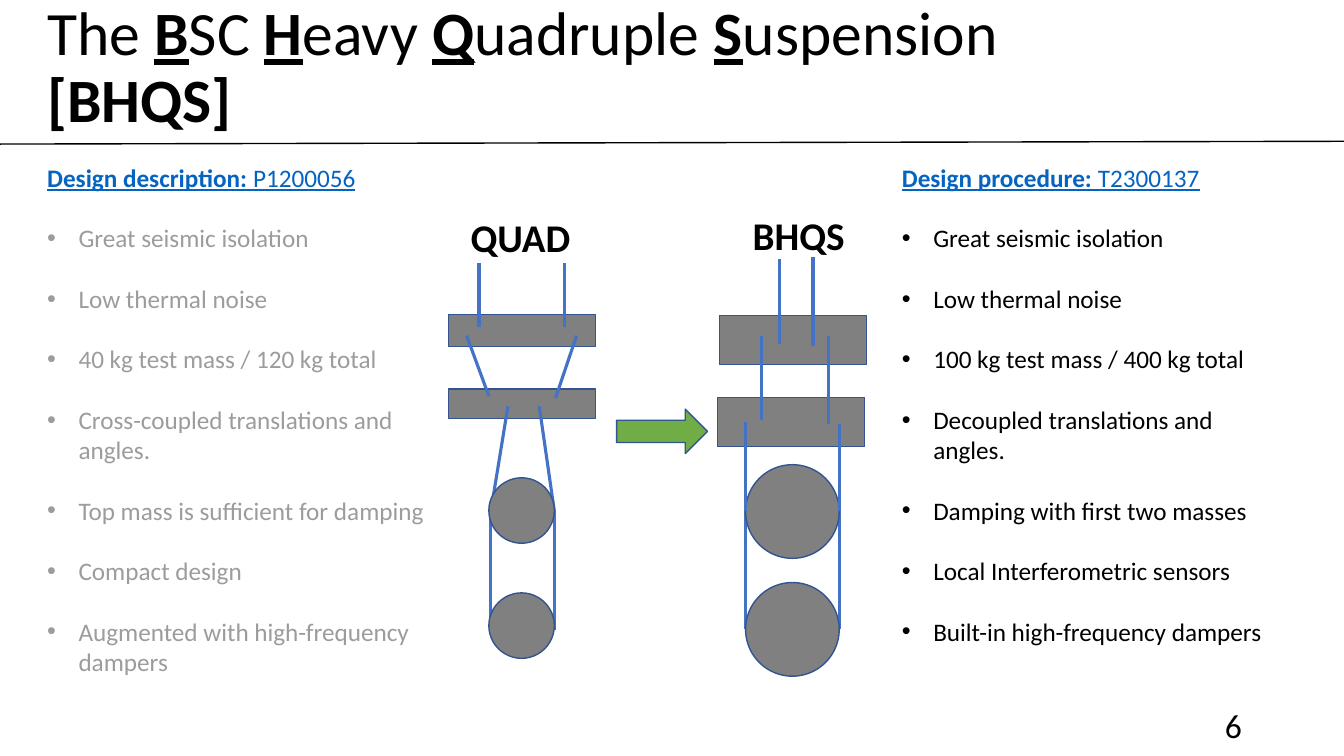
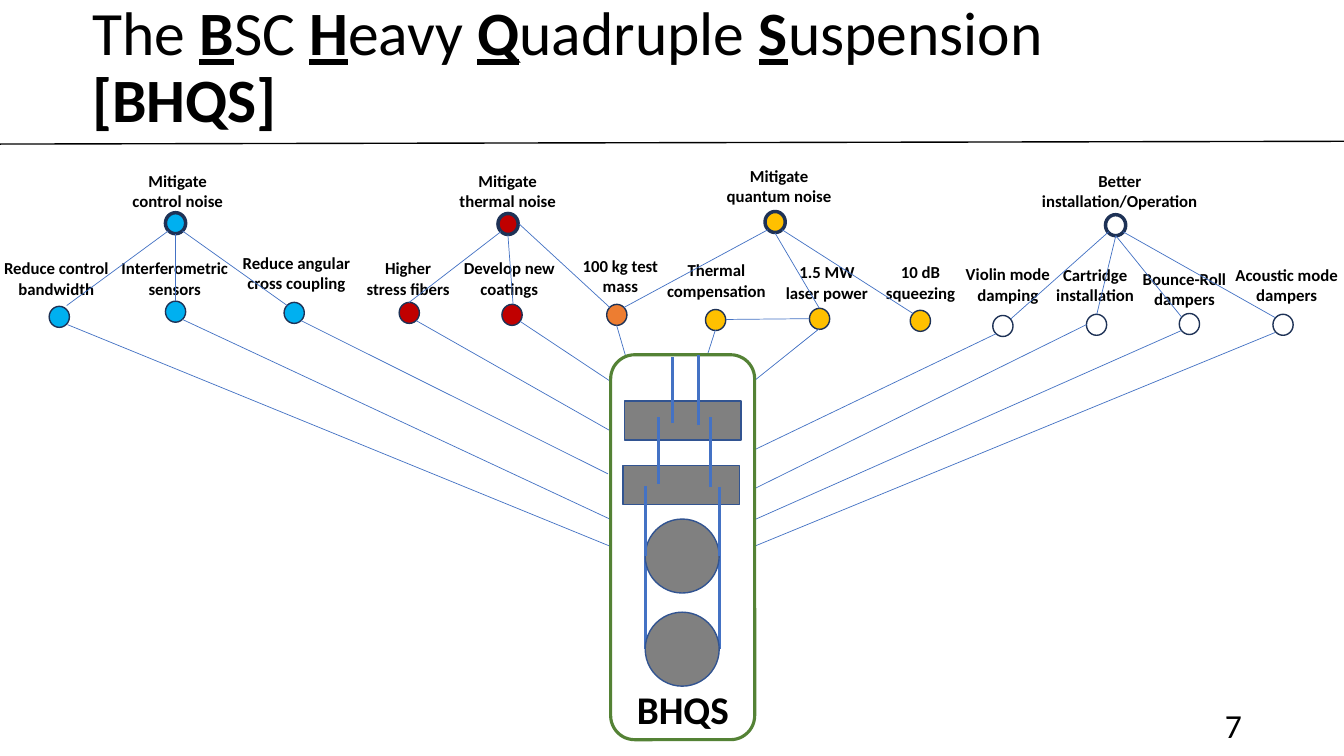
from lxml import etree
from pptx import Presentation
from pptx.dml.color import RGBColor
from pptx.enum import shapes, text
from pptx.oxml import ns
from pptx.util import Cm, Pt

BLACK, GREY, FADED, WHITE = "000000", "808080", "9C9C9C", "FFFFFF"
WIRE, EDGE, NAVY, LINK = "4472C4", "325491", "1E3256", "0563C1"
CYAN, RED, AMBER, ORANGE = "00B0F0", "C00000", "FFC000", "ED7D31"
RECT, OVAL = shapes.MSO_SHAPE.RECTANGLE, shapes.MSO_SHAPE.OVAL
LEFT, CENTER, RIGHT = text.PP_ALIGN.LEFT, text.PP_ALIGN.CENTER, text.PP_ALIGN.RIGHT
rgb = RGBColor.from_string


def draw(parent, kind, place, line, width, fill=None):
    """Add a shape at (x, y, w, h), or a line (x1, y1, x2, y2) if kind is None."""
    place = [Cm(v) for v in place]
    if kind is None:
        sp = parent.add_connector(shapes.MSO_CONNECTOR.STRAIGHT, *place)
        etree.SubElement(sp._element.spPr, ns.qn("a:effectLst"))
    else:
        sp = parent.add_shape(kind, *place)
        sp.shadow.inherit = False
        sp.fill.solid()
        sp.fill.fore_color.rgb = rgb(fill)
    sp.line.color.rgb = rgb(line)
    sp.line.width = Pt(width)


def write(parent, place, paras, size, color=BLACK, bullet=False, anchor=text.MSO_ANCHOR.TOP, **layout):
    """Add a text box; a paragraph is a list of (text, style), style from "b" and "u"."""
    tf = parent.add_textbox(*[Cm(v) for v in place]).text_frame
    tf.word_wrap = True
    tf.vertical_anchor = anchor
    for i, runs in enumerate(paras):
        p = tf.paragraphs[0] if i == 0 else tf.add_paragraph()
        for name, value in layout.items():
            if i or name != "space_before":
                setattr(p, name, value)
        if bullet:
            pPr = p._p.get_or_add_pPr()
            pPr.set("marL", str(Cm(0.79)))
            pPr.set("indent", str(-Cm(0.79)))
            etree.SubElement(pPr, ns.qn("a:buFont")).set("typeface", "Arial")
            etree.SubElement(pPr, ns.qn("a:buChar")).set("char", "•")
        for words, style in runs:
            r = p.add_run()
            r.text = words
            font = {"name": "Calibri", "size": Pt(size), "bold": "b" in style, "underline": "u" in style}
            for name, value in font.items():
                setattr(r.font, name, value)
            r.font.color.rgb = rgb(color)


prs = Presentation()
prs.slide_width, prs.slide_height = Cm(33.87), Cm(19.05)
compare, goals = [prs.slides.add_slide(prs.slide_layouts[6]).shapes for _ in range(2)]

# Slide 1: the present suspension beside the new one
write(compare, (11.61, 5.38, 6.25, 1.52), [[("QUAD", "b")]], 28, line_spacing=0.9)
for y, h in ((7.92, 0.81), (9.8, 0.74)):
    draw(compare, RECT, (11.3, y, 3.71, h), EDGE, 1, GREY)
quad_wires = [
    (12.07, 8.23, 12.07, 6.63), (14.22, 8.23, 14.22, 6.63),
    (12.32, 9.98, 11.76, 8.46), (14, 10.03, 14.53, 8.46),
    (12.37, 12.88, 12.8, 10.24), (13.97, 12.88, 13.59, 10.24),
    (12.37, 15.88, 12.37, 12.88), (13.97, 15.88, 13.97, 12.88),
]
for wire in quad_wires:
    draw(compare, None, wire, WIRE, 2.25)
for y in (12.04, 14.94):
    draw(compare, OVAL, (12.32, y, 1.65, 1.65), EDGE, 1, GREY)
draw(compare, shapes.MSO_SHAPE.RIGHT_ARROW, (15.54, 10.31, 2.29, 1.12), EDGE, 1, "70AD47")

columns = [
    (0.94, 10.36, FADED, "Design description: ", "P1200056", [
        "Great seismic isolation",
        "Low thermal noise",
        "40 kg test mass / 120 kg total",
        "Cross-coupled translations and angles.",
        "Top mass is sufficient for damping",
        "Compact design",
        "Augmented with high-frequency dampers",
    ]),
    (22.48, 9.93, BLACK, "Design procedure: ", "T2300137", [
        "Great seismic isolation",
        "Low thermal noise",
        "100 kg test mass / 400 kg total",
        "Decoupled translations and angles.",
        "Damping with first two masses",
        "Local Interferometric sensors",
        "Built-in high-frequency dampers",
    ]),
]
for x, w, color, heading, number, points in columns:
    write(compare, (x, 3.96, w, 1.02), [[(heading, "bu"), (number, "u")]], 18, LINK)
    write(compare, (x, 5.49, w, 12), [[(point, "")] for point in points], 18, color,
          bullet=True, space_before=Pt(21.6))

# Slide 2: goals (thick dots) and measures (thin dots) leading to the suspension
# label, label x, y, width, dot x, y, colour, dot outline
nodes = [
    ("Mitigate\ncontrol noise", 2.64, 4.17, 3.68, 4.17, 5.36, CYAN, 2.5),
    ("Mitigate thermal noise", 11.07, 4.17, 3.45, 12.55, 5.38, RED, 2.5),
    ("Mitigate quantum noise", 17.91, 4.06, 3.45, 19.28, 5.33, AMBER, 2.5),
    ("Better installation/Operation", 25.96, 4.17, 4.52, 27.86, 5.41, WHITE, 2.5),
    ("Reduce control bandwidth", -0.51, 6.38, 3.86, 1.24, 7.72, CYAN, 1),
    ("Interferometric sensors", 2.69, 6.38, 3.43, 4.17, 7.59, CYAN, 1),
    ("Reduce angular cross coupling", 5.49, 6.25, 3.96, 7.16, 7.62, CYAN, 1),
    ("Higher stress fibers", 8.94, 6.38, 2.69, 10.06, 7.62, RED, 1),
    ("Develop new coatings", 11.35, 6.38, 2.97, 12.65, 7.67, RED, 1),
    ("100 kg test mass", 14.38, 6.32, 2.51, 15.29, 7.67, ORANGE, 1),
    ("Thermal compensation", 16.33, 6.43, 3.45, 17.78, 7.8, AMBER, 1),
    ("1.5 MW laser power", 19.43, 6.48, 2.82, 20.4, 7.77, AMBER, 1),
    ("10 dB squeezing", 21.79, 6.48, 2.82, 22.94, 7.82, AMBER, 1),
    ("Violin mode damping", 23.95, 6.53, 2.9, 25.02, 7.95, WHITE, 1),
    ("Cartridge installation", 25.91, 6.55, 3.38, 27.38, 7.92, WHITE, 1),
    ("Bounce-Roll dampers", 28.4, 6.65, 2.9, 29.72, 7.9, WHITE, 1),
    ("Acoustic mode dampers", 30.71, 6.55, 3.43, 32.08, 7.92, WHITE, 1),
]
for label, x, y, w, dot_x, dot_y, color, outline in nodes:
    draw(goals, OVAL, (dot_x, dot_y, 0.51, 0.53), NAVY, outline, color)
    write(goals, (x, y, w, 1.27), [[(part, "b")] for part in label.split("\n")], 12, alignment=CENTER)

goal_links = [
    (4.24, 5.82, 1.68, 7.7), (4.42, 5.89, 4.42, 7.59), (4.6, 5.82, 7.24, 7.7),
    (12.62, 5.84, 10.31, 7.62), (12.8, 5.92, 12.93, 7.67), (13.08, 5.64, 15.37, 7.75),
    (19.35, 5.79, 15.72, 7.75), (19.53, 5.87, 20.65, 7.77), (19.71, 5.79, 23.01, 7.9),
    (20.4, 8.03, 18.29, 8.05), (27.94, 5.84, 25.48, 8.03), (28.12, 5.94, 27.64, 7.92),
    (28.12, 5.94, 29.77, 7.98), (28.3, 5.84, 32.13, 8),
]
box_links = [
    (1.7, 8.18, 15.39, 13.77), (4.6, 8.05, 15.37, 13.08), (7.59, 8.08, 15.32, 11.94),
    (10.49, 8.08, 15.37, 10.85), (13.11, 8.1, 15.37, 9.6), (15.54, 8.2, 15.8, 9.09),
    (18.03, 8.31, 17.78, 9.09), (20.65, 8.28, 19, 9.6), (25.1, 8.41, 19.02, 11.33),
    (27.38, 8.18, 19, 12.32), (29.77, 8.33, 19.05, 13.08), (32.13, 8.38, 19, 13.77),
]
for link in goal_links + box_links:
    draw(goals, None, link, WIRE, 0.5)
draw(goals, shapes.MSO_SHAPE.ROUNDED_RECTANGLE, (15.39, 8.94, 3.63, 9.7), "548235", 2.25, WHITE)

# Both slides: new suspension, title, rule and page number
# parts are placed from the corner of the upper masses, back to front
bhqs_parts = [
    (RECT, 0.05, 0, 3.71, 1.24), (RECT, 0, 2.06, 3.71, 1.24),
    (None, 0.71, 7.9, 0.71, 4.93), (None, 3.07, 7.9, 3.07, 4.93),
    (OVAL, 0.71, 6.73, 2.36, 2.36), (OVAL, 0.71, 3.76, 2.36, 2.36),
    (None, 1.12, 2.64, 1.12, 0.51), (None, 2.79, 2.74, 2.79, 0.51),
    (None, 0.71, 4.93, 0.71, 2.69), (None, 3.07, 4.93, 3.07, 2.74),
    (None, 1.57, 0.71, 1.57, -1.42), (None, 2.41, 0.76, 2.41, -1.47),
]
title = [
    [("The ", ""), ("B", "bu"), ("SC ", ""), ("H", "bu"), ("eavy ", ""), ("Q", "bu"),
     ("uadruple ", ""), ("S", "bu"), ("uspension", "")],
    [("[BHQS]", "b")],
]
# slide, page, title x, suspension x, y, scale, label x, y
pages = [
    (compare, "6", 0.94, 18.08, 7.95, 1, 18.72, 5.33),
    (goals, "7", 2.08, 15.7, 10.11, 0.79, 15.8, 17.27),
]
for s, page, title_x, left, top, scale, label_x, label_y in pages:
    group = s.add_group_shape().shapes
    for kind, x, y, x2, y2 in bhqs_parts:
        x, y, x2, y2 = [v * scale for v in (x, y, x2, y2)]
        if kind is None:
            draw(group, None, (left + x, top + y, left + x2, top + y2), WIRE, 2.25)
        else:
            draw(group, kind, (left + x, top + y, x2, y2), EDGE, 1, GREY)
    write(s, (label_x, label_y, 6.25, 1.52), [[("BHQS", "b")]], 28, line_spacing=0.9)
    write(s, (title_x, -0.1, 29.2, 3.68), title, 44, anchor=text.MSO_ANCHOR.MIDDLE, line_spacing=0.9)
    draw(s, None, (0, 3.63, 33.87, 3.56), BLACK, 1)
    write(s, (23.93, 17.65, 7.62, 1.02), [[(page, "")]], 24, alignment=RIGHT)

prs.save("out.pptx")
